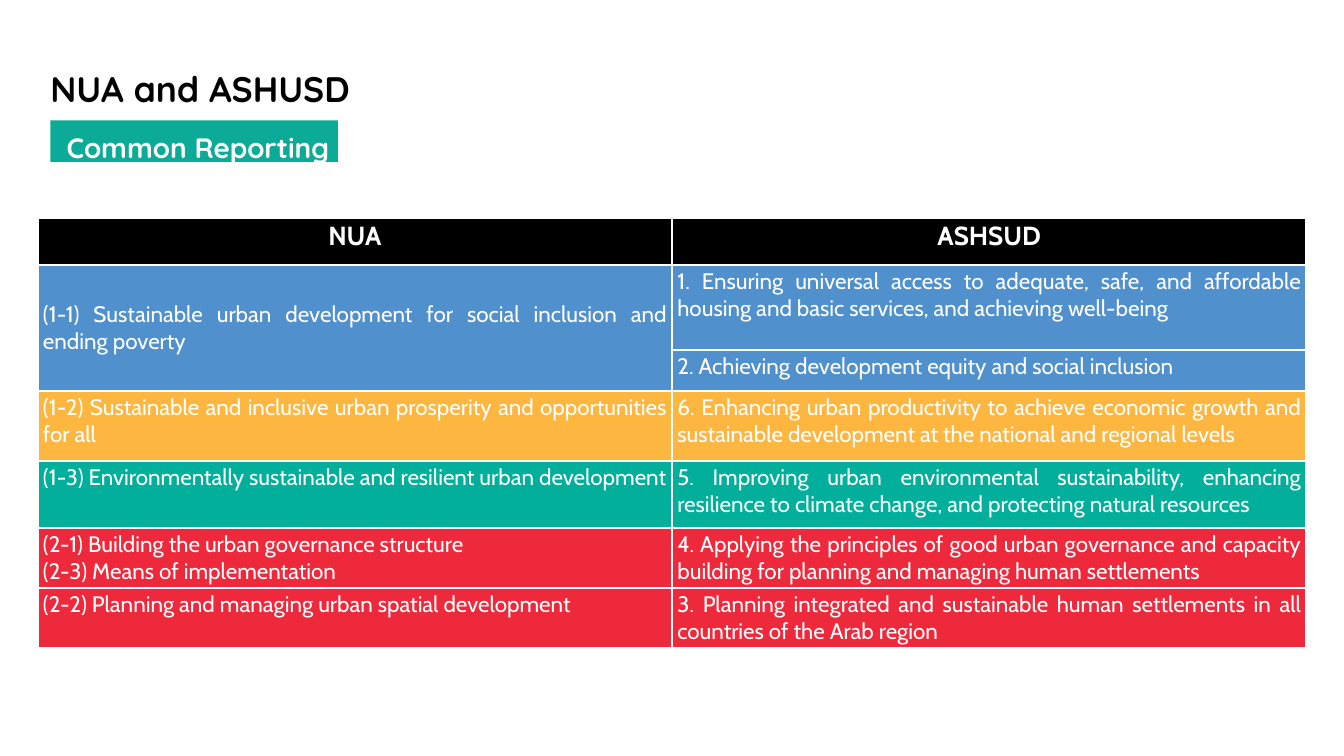
"""Build the slide comparing NUA and ASHSUD common reporting themes."""
from lxml import etree
from pptx import Presentation
from pptx.dml.color import RGBColor
from pptx.enum.shapes import MSO_SHAPE
from pptx.enum.text import MSO_ANCHOR, PP_ALIGN
from pptx.oxml.ns import qn
from pptx.util import Inches, Pt

CENTER, JUSTIFY, LEFT = PP_ALIGN.CENTER, PP_ALIGN.JUSTIFY, PP_ALIGN.LEFT
TOP, MIDDLE = MSO_ANCHOR.TOP, MSO_ANCHOR.MIDDLE
RECTANGLE = MSO_SHAPE.RECTANGLE

BLACK, WHITE, BANNER = "000000", "FFFFFF", "0BAB98"
BLUE, AMBER, GREEN, RED = "4F90CD", "FDB740", "01AF9B", "EE293B"
HEADING_FONT, TABLE_FONT = "Quicksand", "Cabin"

TITLE = "NUA and ASHUSD"
SUBTITLE = "Common Reporting"
ROWS = [
    (0.7, BLACK, "NUA", "ASHSUD"),
    (1.27, BLUE,
     "(1-1) Sustainable urban development for social inclusion and ending poverty",
     "1. Ensuring universal access to adequate, safe, and affordable housing and basic services, "
     "and achieving well-being"),
    (0.61, BLUE, "", "2. Achieving development equity and social inclusion"),
    (1.04, AMBER,
     "(1-2) Sustainable and inclusive urban prosperity and opportunities for all",
     "6. Enhancing urban productivity to achieve economic growth and sustainable development "
     "at the national and regional levels"),
    (1, GREEN,
     "(1-3) Environmentally sustainable and resilient urban development",
     "5. Improving urban environmental sustainability, enhancing resilience to climate change, "
     "and protecting natural resources"),
    (0.61, RED,
     "(2-1) Building the urban governance structure\n(2-3) Means of implementation",
     "4. Applying the principles of good urban governance and capacity building for planning "
     "and managing human settlements"),
    (0.61, RED,
     "(2-2) Planning and managing urban spatial development",
     "3. Planning integrated and sustainable human settlements in all countries of the Arab region"),
]

SLIDE_WIDTH, SLIDE_HEIGHT = 20, 11.25
TABLE_LEFT, TABLE_TOP = 0.56, 3.24
TABLE_WIDTH = SLIDE_WIDTH - 2 * TABLE_LEFT


def color(value):
    return RGBColor.from_string(value)


def format_text(frame, font, size, text_color, bold, alignment, spacing=None):
    for paragraph in frame.paragraphs:
        paragraph.alignment = alignment
        if spacing:
            paragraph.line_spacing = Pt(spacing)
        for run in paragraph.runs:
            run.font.name = font
            run.font.size = Pt(size)
            run.font.bold = bold
            run.font.color.rgb = color(text_color)


def place_heading(shape, box, text, size, text_color, spacing):
    shape.left, shape.top, shape.width, shape.height = map(Inches, box)
    frame = shape.text_frame
    frame.text = text
    frame.word_wrap = True
    frame.vertical_anchor = TOP
    frame.margin_left = frame.margin_right = frame.margin_top = frame.margin_bottom = 0
    format_text(frame, HEADING_FONT, size, text_color, True, LEFT, spacing)


def add_borders(cell):
    properties = cell._tc.get_or_add_tcPr()
    for side in ("lnL", "lnR", "lnT", "lnB"):
        line = etree.SubElement(properties, qn(f"a:{side}"), w=str(Pt(3)))
        fill = etree.SubElement(line, qn("a:solidFill"))
        etree.SubElement(fill, qn("a:srgbClr"), val=WHITE)


def add_comparison_table(slide):
    height = sum(row[0] for row in ROWS)
    table = slide.shapes.add_table(
        len(ROWS), 2, Inches(TABLE_LEFT), Inches(TABLE_TOP),
        Inches(TABLE_WIDTH), Inches(height)).table
    table.first_row = table.horz_banding = False
    for row_index, (row_height, fill, *texts) in enumerate(ROWS):
        table.rows[row_index].height = Inches(row_height)
        header = row_index == 0
        for column_index, text in enumerate(texts):
            cell = table.cell(row_index, column_index)
            cell.text = text
            cell.margin_left = cell.margin_right = Inches(0.08)
            cell.margin_top = cell.margin_bottom = Inches(0.04)
            add_borders(cell)
            cell.fill.solid()
            cell.fill.fore_color.rgb = color(fill)
            format_text(cell.text_frame, TABLE_FONT, 28 if header else 24, WHITE,
                        header, CENTER if header else JUSTIFY)
    inclusion = table.cell(1, 0)
    inclusion.merge(table.cell(2, 0))
    inclusion.vertical_anchor = MIDDLE


def main():
    presentation = Presentation()
    presentation.slide_width = Inches(SLIDE_WIDTH)
    presentation.slide_height = Inches(SLIDE_HEIGHT)
    slide = presentation.slides.add_slide(presentation.slide_layouts[5])
    add_comparison_table(slide)
    place_heading(slide.shapes.title, (0.75, 0.89, 11.38, 0.69), TITLE, 38, BLACK, 53.1)
    banner = slide.shapes.add_shape(
        RECTANGLE, Inches(0.75), Inches(1.79), Inches(4.28), Inches(0.62))
    banner.shadow.inherit = False
    banner.fill.solid()
    banner.fill.fore_color.rgb = color(BANNER)
    banner.line.fill.background()
    subtitle = slide.shapes.add_textbox(0, 0, 0, 0)
    place_heading(subtitle, (0.99, 1.78, 4.19, 0.6), SUBTITLE, 30, WHITE, 48)
    presentation.save("out.pptx")


if __name__ == "__main__":
    main()
